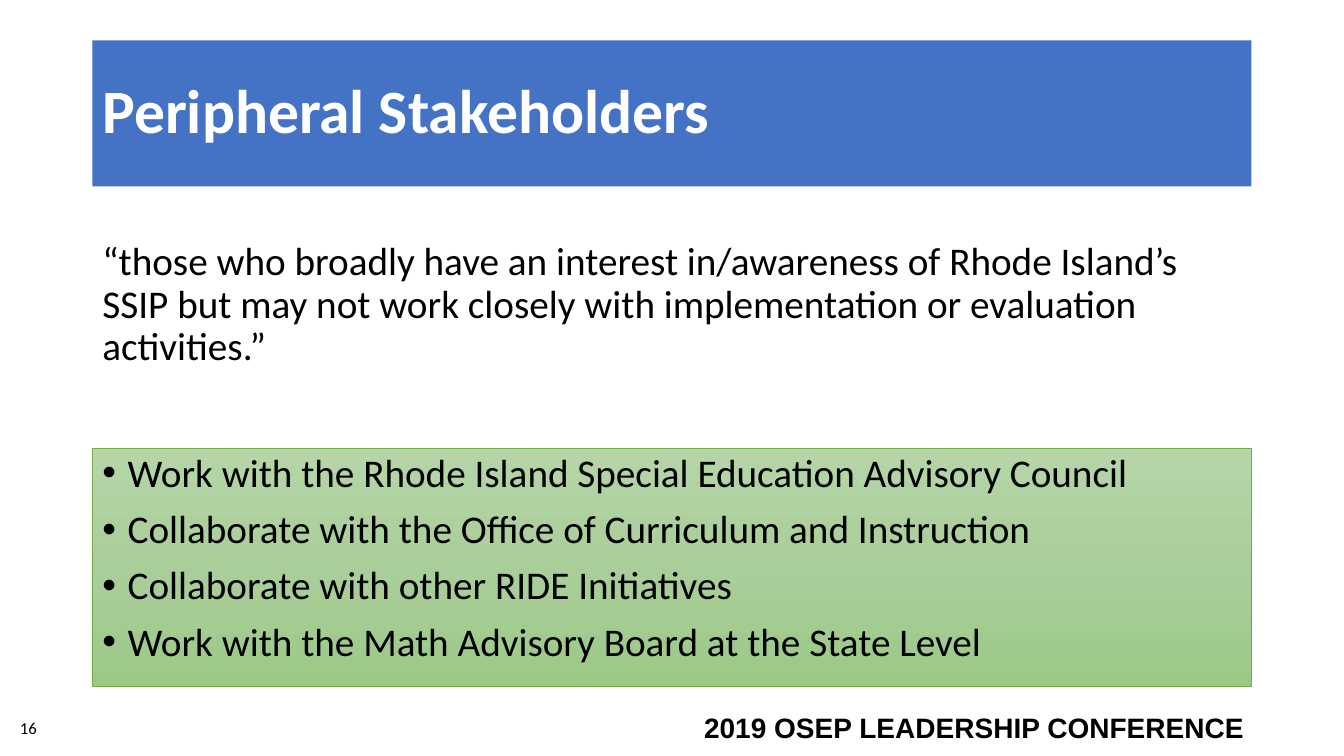
import copy
from dataclasses import dataclass

import pptx
import pptx.dml.color
import pptx.enum.shapes
import pptx.enum.text
import pptx.oxml
import pptx.oxml.ns
import pptx.util

Cm = pptx.util.Cm
Pt = pptx.util.Pt
Align = pptx.enum.text.PP_ALIGN
Anchor = pptx.enum.text.MSO_ANCHOR


@dataclass(frozen=True)
class Theme:
    body_font: str = "Calibri"
    footer_font: str = "Arial"
    text: str = "000000"
    title_text: str = "FFFFFF"
    title_fill: str = "4472C4"
    panel_line: str = "70AD47"
    panel_stops: tuple = ((0, "B5D5A7"), (0.5, "AACE9A"), (1, "9CC987"))
    title_size: int = 44
    body_size: int = 28
    footer_size: int = 20
    number_size: int = 12


THEME = Theme()
LEFT, WIDTH = 2.33, 29.21
ACTIONS = [
    "Work with the Rhode Island Special Education Advisory Council",
    "Collaborate with the Office of Curriculum and Instruction",
    "Collaborate with other RIDE Initiatives",
    "Work with the Math Advisory Board at the State Level",
]


def rgb(value):
    return pptx.dml.color.RGBColor.from_string(value)


def write_text(shape, lines, *, size, font=THEME.body_font, color=THEME.text, bold=False,
               align=Align.LEFT, anchor=Anchor.TOP, line_spacing=1.0, gap=0, bullet=False):
    frame = shape.text_frame
    frame.word_wrap = True
    frame.vertical_anchor = anchor
    for index, line in enumerate(lines):
        paragraph = frame.add_paragraph() if index else frame.paragraphs[0]
        if bullet:
            add_bullet(paragraph)
        paragraph.alignment = align
        paragraph.line_spacing = line_spacing
        paragraph.space_before = Pt(gap if index else 0)
        run = paragraph.add_run()
        run.text = line
        run.font.name = font
        run.font.size = Pt(size)
        run.font.bold = bold
        run.font.color.rgb = rgb(color)


def add_bullet(paragraph, indent=Cm(0.64)):
    properties = paragraph._p.get_or_add_pPr()
    properties.set("marL", str(indent))
    properties.set("indent", str(-indent))
    namespace = pptx.oxml.ns.nsdecls("a")
    properties.append(pptx.oxml.parse_xml(f'<a:buFont {namespace} typeface="Arial"/>'))
    properties.append(pptx.oxml.parse_xml(f'<a:buChar {namespace} char="•"/>'))


def fill_gradient(shape, stops):
    """Fill from top to bottom with three colour stops."""
    shape.fill.gradient()
    shape.fill.gradient_angle = 270
    first = shape.fill._fill._gradFill.gsLst[0]
    first.addnext(copy.deepcopy(first))
    for stop, (position, color) in zip(shape.fill.gradient_stops, stops):
        stop.position = position
        stop.color.rgb = rgb(color)


def add_rectangle(slide, box):
    shape = slide.shapes.add_shape(pptx.enum.shapes.MSO_SHAPE.RECTANGLE, *map(Cm, box))
    shape.shadow.inherit = False
    return shape


def add_title(slide, box):
    banner = add_rectangle(slide, box)
    banner.fill.solid()
    banner.fill.fore_color.rgb = rgb(THEME.title_fill)
    banner.line.fill.background()
    write_text(banner, ["Peripheral Stakeholders"], size=THEME.title_size, bold=True,
               color=THEME.title_text, anchor=Anchor.MIDDLE, line_spacing=0.9)


def add_definition(slide, box):
    definition = slide.shapes.add_textbox(*map(Cm, box))
    write_text(definition, ["“those who broadly have an interest in/awareness of Rhode Island’s "
                            "SSIP but may not work closely with implementation or evaluation "
                            "activities.”"], size=THEME.body_size, line_spacing=0.9)


def add_actions(slide, box):
    panel = add_rectangle(slide, box)
    fill_gradient(panel, THEME.panel_stops)
    panel.line.color.rgb = rgb(THEME.panel_line)
    panel.line.width = Pt(0.5)
    write_text(panel, ACTIONS, size=THEME.body_size, line_spacing=0.9, gap=10, bullet=True)


def add_footer(slide, box):
    """Place the slide number at the left of the box and the event at its right."""
    left, top, width, height = box
    number = slide.shapes.add_textbox(Cm(left), Cm(top + 0.05), Cm(7.62), Cm(height - 0.1))
    write_text(number, ["16"], size=THEME.number_size, anchor=Anchor.MIDDLE)
    event_width = 14.66
    event = slide.shapes.add_textbox(Cm(left + width - event_width), Cm(top),
                                     Cm(event_width), Cm(height))
    write_text(event, ["2019 OSEP LEADERSHIP CONFERENCE"], size=THEME.footer_size,
               font=THEME.footer_font, bold=True, align=Align.RIGHT)


def main():
    presentation = pptx.Presentation()
    presentation.slide_width = Cm(33.87)
    presentation.slide_height = Cm(19.05)
    slide = presentation.slides.add_slide(presentation.slide_layouts[6])
    add_title(slide, (LEFT, 1.02, WIDTH, 3.68))
    add_definition(slide, (LEFT, 5.97, WIDTH, 3.99))
    add_actions(slide, (LEFT, 11.3, WIDTH, 6))
    add_footer(slide, (0.25, 17.78, 31.35, 1.12))
    presentation.save("out.pptx")


if __name__ == "__main__":
    main()
